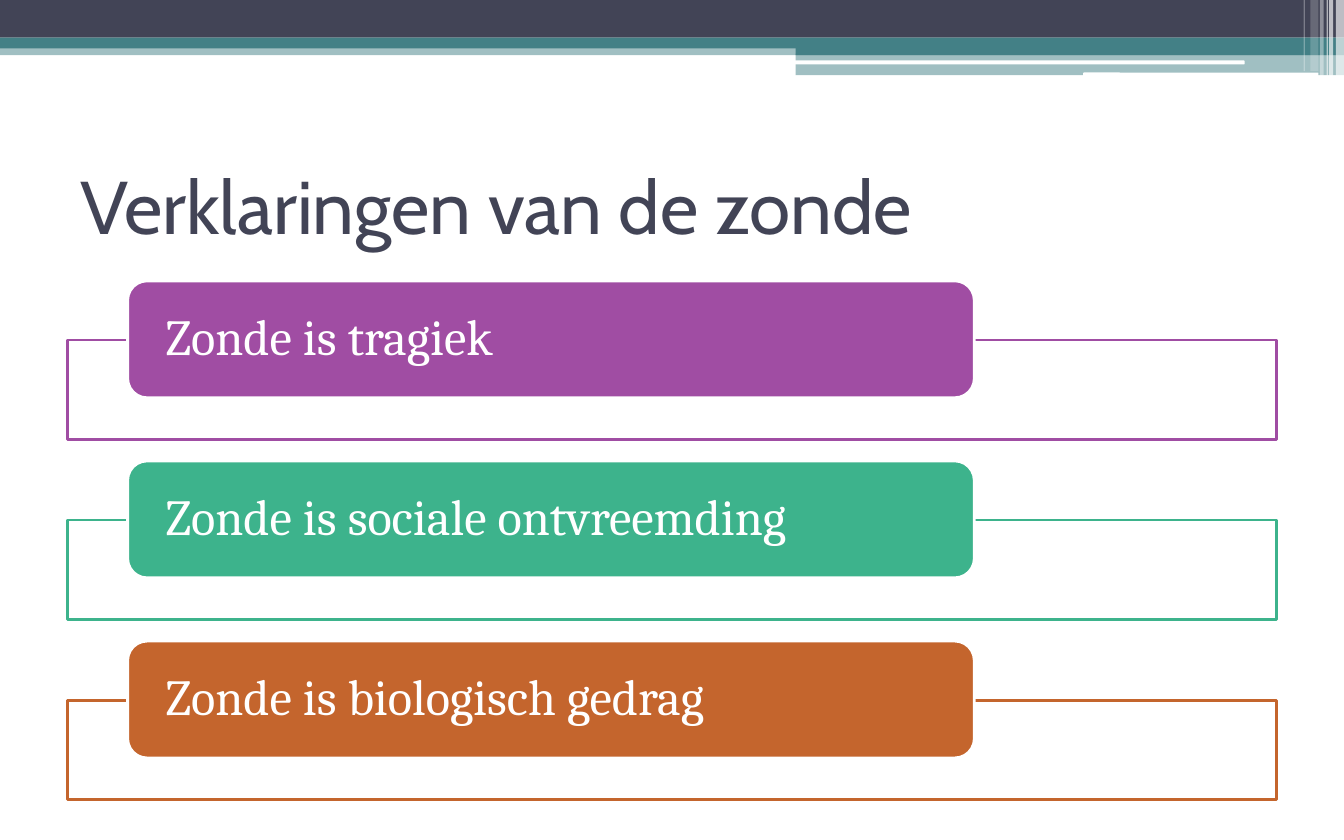
import dataclasses

import lxml.etree
import pptx
import pptx.dml.color
import pptx.enum.shapes
import pptx.enum.text
import pptx.oxml.ns
import pptx.util

Inches = pptx.util.Inches
Shape = pptx.enum.shapes.MSO_SHAPE


@dataclasses.dataclass(frozen=True)
class Theme:
    dark: str = "424456"
    teal: str = "438086"
    white: str = "FFFFFF"
    purple: str = "A04DA3"
    green: str = "3DB38C"
    orange: str = "C4652D"
    title_font: str = "Cabin"
    body_font: str = "Cambria"
    title_size: int = 40
    body_size: int = 27
    line_width: float = 1.5


class SlideBuilder:
    """Draws styled elements on the current page."""

    def __init__(self, page, theme):
        self.page = page
        self.theme = theme

    def color(self, value):
        return pptx.dml.color.RGBColor.from_string(value)

    def shape(self, kind, bounds, fill, opacity=100, line=None):
        box = self.page.shapes.add_shape(kind, *map(Inches, bounds))
        box.shadow.inherit = False
        box.fill.solid()
        box.fill.fore_color.rgb = self.color(fill)
        if opacity < 100:
            tint = box.fill._xPr.find(".//" + pptx.oxml.ns.qn("a:srgbClr"))
            alpha = lxml.etree.SubElement(tint, pptx.oxml.ns.qn("a:alpha"))
            alpha.set("val", str(opacity * 1000))
        if line:
            box.line.color.rgb = self.color(line)
            box.line.width = pptx.util.Pt(self.theme.line_width)
        else:
            box.line.fill.background()
        return box

    def set_text(self, box, text, font, size, color):
        frame = box.text_frame
        frame.text = text
        frame.word_wrap = True
        frame.auto_size = pptx.enum.text.MSO_AUTO_SIZE.NONE
        frame.vertical_anchor = pptx.enum.text.MSO_ANCHOR.MIDDLE
        para = frame.paragraphs[0]
        para.alignment = pptx.enum.text.PP_ALIGN.LEFT
        for span in para.runs:
            span.font.name = font
            span.font.size = pptx.util.Pt(size)
            span.font.color.rgb = self.color(color)
        return frame

    def title(self, text, bounds):
        box = self.page.shapes.title
        box.left, box.top, box.width, box.height = map(Inches, bounds)
        theme = self.theme
        self.set_text(box, text, theme.title_font, theme.title_size, theme.dark)

    def list_item(self, text, top, accent):
        theme = self.theme
        self.shape(Shape.RECTANGLE, (0.5, top + 0.44, 9, 0.74), theme.white, 90, accent)
        label = self.shape(
            Shape.ROUNDED_RECTANGLE, (0.95, top, 6.3, 0.87), accent, line=theme.white
        )
        frame = self.set_text(label, text, theme.body_font, theme.body_size, theme.white)
        frame.margin_left = frame.margin_right = Inches(0.24)
        frame.margin_top = frame.margin_bottom = 0
        frame.paragraphs[0].line_spacing = 0.9

    def header(self):
        theme = self.theme
        bands = [
            ((0, 0.33, 10, 0.08), theme.teal, 50),
            ((0, 0, 10, 0.28), theme.dark, 100),
            ((0, 0.28, 10, 0.08), theme.teal, 100),
            ((5.92, 0.33, 4.08, 0.08), theme.teal, 100),
            ((5.92, 0.4, 4.08, 0.16), theme.teal, 50),
        ]
        for bounds, fill, opacity in bands:
            self.shape(Shape.RECTANGLE, bounds, fill, opacity)
        for bounds in [(5.91, 0.45, 3.35, 0.03), (8.06, 0.54, 1.75, 0.03)]:
            self.shape(Shape.ROUNDED_RECTANGLE, bounds, theme.white)
        stripes = [
            (9.94, 0.06, 0.57, 65),
            (9.89, 0.03, 0.57, 65),
            (9.87, 0.01, 0.57, 60),
            (9.82, 0.03, 0.57, 40),
            (9.75, 0.06, 0.53, 20),
            (9.7, 0.01, 0.53, 30),
        ]
        for left, width, height, opacity in stripes:
            self.shape(Shape.RECTANGLE, (left, 0, width, height), theme.white, opacity)


def main():
    theme = Theme()
    deck = pptx.Presentation()
    deck.slide_width, deck.slide_height = Inches(10), Inches(6.25)
    page = deck.slides.add_slide(deck.slide_layouts.get_by_name("Title Only"))
    builder = SlideBuilder(page, theme)
    builder.header()
    builder.title("Verklaringen van de zonde", (0.5, 1.04, 9, 0.97))
    items = [
        ("Zonde is tragiek", theme.purple),
        ("Zonde is sociale ontvreemding", theme.green),
        ("Zonde is biologisch gedrag", theme.orange),
    ]
    for index, (text, accent) in enumerate(items):
        builder.list_item(text, 2.09 + index * 1.34, accent)
    deck.save("out.pptx")


if __name__ == "__main__":
    main()
